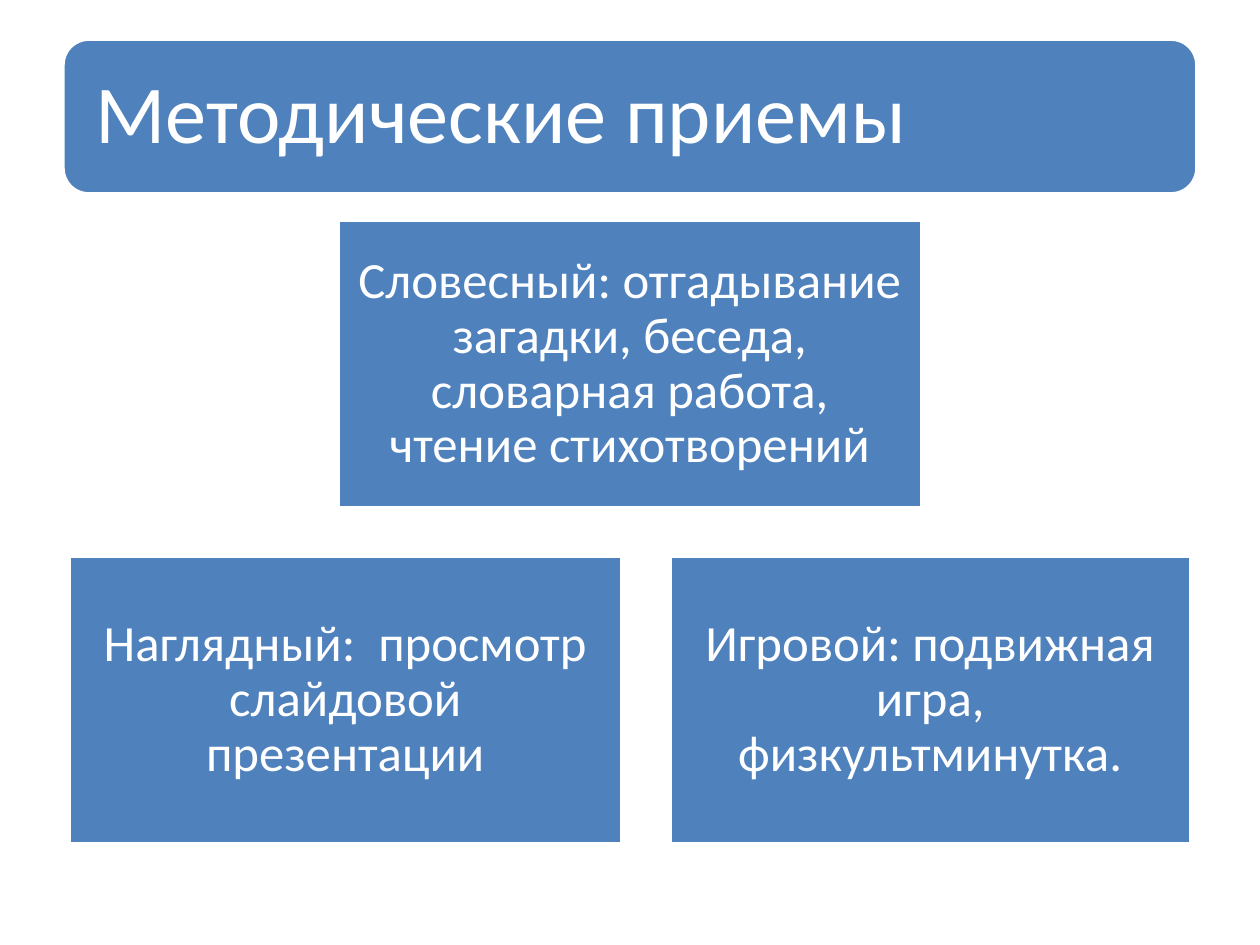
from dataclasses import dataclass

from pptx import Presentation
from pptx.dml.color import RGBColor
from pptx.enum.shapes import MSO_SHAPE
from pptx.enum.text import MSO_ANCHOR, MSO_AUTO_SIZE, PP_ALIGN
from pptx.util import Cm, Pt

BLUE = RGBColor(0x4F, 0x81, 0xBD)
WHITE = RGBColor(0xFF, 0xFF, 0xFF)
FONT = "Calibri"

SLIDE_WIDTH = 25.4
CARD_HEIGHT = 5.79
CARD_GAP = 0.98
CARDS_TOP = 4.45


@dataclass
class Card:
    text: str
    width: float  # centimetres


CARD_ROWS = [
    [Card("Словесный: отгадывание загадки, беседа, словарная работа, чтение стихотворений", 11.76)],
    [
        Card("Наглядный:  просмотр слайдовой презентации", 11.13),
        Card("Игровой: подвижная игра, физкультминутка.", 10.49),
    ],
]


def add_block(slide, kind: MSO_SHAPE, left: float, top: float, width: float, height: float):
    """Add a blue block with a white outline; lengths in centimetres."""
    shape = slide.shapes.add_shape(kind, Cm(left), Cm(top), Cm(width), Cm(height))
    shape.shadow.inherit = False
    shape.fill.solid()
    shape.fill.fore_color.rgb = BLUE
    shape.line.color.rgb = WHITE
    shape.line.width = Pt(2)
    return shape


def write_text(shape, text: str, size: float, alignment: PP_ALIGN, margin: float) -> None:
    """Fill a shape with one white, vertically centred paragraph."""
    frame = shape.text_frame
    frame.text = text
    frame.word_wrap = True
    frame.auto_size = MSO_AUTO_SIZE.NONE
    frame.vertical_anchor = MSO_ANCHOR.MIDDLE
    frame.margin_left = frame.margin_right = Cm(margin)
    frame.margin_top = frame.margin_bottom = Cm(margin)
    paragraph = frame.paragraphs[0]
    paragraph.alignment = alignment
    paragraph.line_spacing = 0.9
    paragraph.font.name = FONT
    paragraph.font.size = Pt(size)
    paragraph.font.color.rgb = WHITE


def add_title(slide) -> None:
    """Put the title placeholder in front of a rounded band."""
    band = add_block(slide, MSO_SHAPE.ROUNDED_RECTANGLE, 1.27, 0.79, 22.86, 3.12)
    title = slide.shapes.title
    band._element.addnext(title._element)
    title.left, title.top = Cm(1.42), Cm(0.94)
    title.width, title.height = Cm(22.56), Cm(2.82)
    write_text(title, "Методические приемы", 47, PP_ALIGN.LEFT, 0.51)


def add_card_row(slide, cards: list[Card], top: float) -> None:
    """Draw a row of cards centred on the slide."""
    row_width = sum(card.width for card in cards) + CARD_GAP * (len(cards) - 1)
    left = (SLIDE_WIDTH - row_width) / 2
    for card in cards:
        shape = add_block(slide, MSO_SHAPE.RECTANGLE, left, top, card.width, CARD_HEIGHT)
        write_text(shape, card.text, 29, PP_ALIGN.CENTER, 0.3)
        left += card.width + CARD_GAP


def main() -> None:
    presentation = Presentation()
    presentation.slide_width = Cm(SLIDE_WIDTH)
    presentation.slide_height = Cm(19.05)
    slide = presentation.slides.add_slide(presentation.slide_layouts[5])

    # Title band
    add_title(slide)

    # Method cards
    for index, cards in enumerate(CARD_ROWS):
        add_card_row(slide, cards, CARDS_TOP + index * (CARD_HEIGHT + CARD_GAP))

    presentation.save("out.pptx")


if __name__ == "__main__":
    main()
